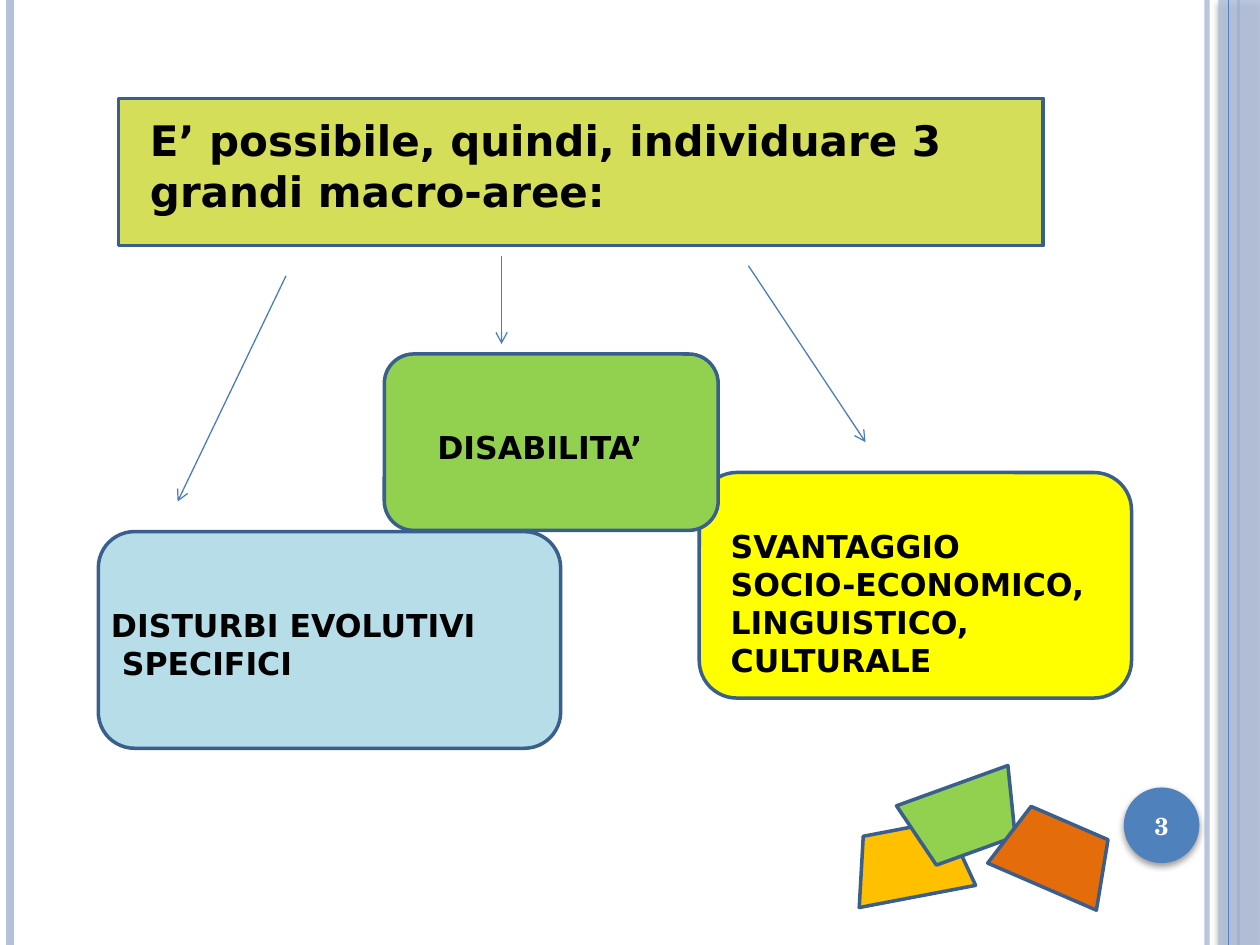
from lxml import etree
from pptx import Presentation
from pptx.dml.color import RGBColor
from pptx.enum.shapes import MSO_CONNECTOR, MSO_SHAPE
from pptx.enum.text import MSO_ANCHOR, MSO_AUTO_SIZE, PP_ALIGN
from pptx.oxml.ns import qn
from pptx.util import Pt

RECT, ROUNDED = MSO_SHAPE.RECTANGLE, MSO_SHAPE.ROUNDED_RECTANGLE
OVAL, TRAPEZOID = MSO_SHAPE.OVAL, MSO_SHAPE.TRAPEZOID
STRAIGHT = MSO_CONNECTOR.STRAIGHT
TOP, MIDDLE = MSO_ANCHOR.TOP, MSO_ANCHOR.MIDDLE
JUSTIFY, CENTER = PP_ALIGN.JUSTIFY, PP_ALIGN.CENTER
FIXED_SIZE = MSO_AUTO_SIZE.NONE

WIDTH, HEIGHT = 720, 540
BLUE, PALE_BLUE, OUTLINE, ARROW = "4F81BD", "B3C1DB", "3A5F8C", "4A7EBB"
GREEN = "92D050"


def rgb(hex_color):
    return RGBColor.from_string(hex_color)


def child(parent, tag, **attributes):
    """Append a DrawingML element with the given attributes."""
    element = etree.SubElement(parent, qn(tag))
    for name, value in attributes.items():
        element.set(name, str(value))
    return element


def set_alpha(color_format, percent):
    """Make a solid fill partly transparent."""
    color = color_format.find(".//" + qn("a:srgbClr"))
    child(color, "a:alpha", val=percent * 1000)


class SlideBuilder:
    body_font = "DejaVu Sans"
    number_font = "TeX Gyre Schola"

    def __init__(self, slide):
        self.slide = slide
        self.shapes = slide.shapes

    def line(self, start, end, color, width, alpha=100, arrow=False):
        connector = self.shapes.add_connector(
            STRAIGHT, *(Pt(value) for value in (*start, *end)))
        connector.line.color.rgb = rgb(color)
        connector.line.width = Pt(width)
        properties = connector._element.spPr
        if alpha < 100:
            set_alpha(properties, alpha)
        if arrow:
            child(properties.find(qn("a:ln")), "a:tailEnd", type="arrow")
        child(properties, "a:effectLst")

    def shape(self, kind, box, fill, outline=OUTLINE, alpha=100,
              rotation=0, shadow=False):
        shape = self.shapes.add_shape(kind, *(Pt(value) for value in box))
        shape.rotation = rotation
        shape.fill.solid()
        shape.fill.fore_color.rgb = rgb(fill)
        if alpha < 100:
            set_alpha(shape._element.spPr, alpha)
        if outline:
            shape.line.color.rgb = rgb(outline)
            shape.line.width = Pt(2)
        else:
            shape.line.fill.background()
        shape.shadow.inherit = False
        if shadow:
            effects = shape._element.spPr.find(qn("a:effectLst"))
            outer = child(effects, "a:outerShdw", blurRad=Pt(4), dist=Pt(2),
                          dir=90 * 60000, rotWithShape=0)
            child(child(outer, "a:srgbClr", val="000000"),
                  "a:alpha", val=40000)
        return shape

    def text(self, shape, lines, size=18, color="000000", font=body_font,
             align=JUSTIFY, anchor=TOP, left=7.2, top=3.6, side=0):
        frame = shape.text_frame
        frame.word_wrap = True
        frame.auto_size = FIXED_SIZE
        frame.vertical_anchor = anchor
        frame.margin_left, frame.margin_top = Pt(left), Pt(top)
        frame.margin_right, frame.margin_bottom = Pt(side), Pt(0)
        for index, line in enumerate(lines):
            paragraph = frame.add_paragraph() if index else frame.paragraphs[0]
            paragraph.alignment = align
            run = paragraph.add_run()
            run.text = line
            run.font.name = font
            run.font.size = Pt(size)
            run.font.bold = True
            run.font.color.rgb = rgb(color)

    def title(self, box, lines, behind):
        """Fill the title placeholder and bring it in front of its banner."""
        title = self.shapes.title
        title.left, title.top, title.width, title.height = map(Pt, box)
        self.text(title, lines, size=24)
        behind._element.addnext(title._element)

    def side_decoration(self):
        for x, color, width, alpha in (
                (689.8, PALE_BLUE, 3, 93),
                (5.8, PALE_BLUE, 4.5, 100),
                (707.8, BLUE, 1.5, 100)):
            self.line((x, 0), (x, HEIGHT), color, width, alpha)
        self.shape(RECT, (696.2, 0, WIDTH - 696.2, HEIGHT), PALE_BLUE,
                   outline=None, alpha=87, shadow=True)
        self.line((702, 0), (702, HEIGHT), BLUE, 0.75)

    def slide_number(self, number):
        badge = self.shape(OVAL, (642.2, 450, 43.2, 43.2), BLUE,
                           outline=None, shadow=True)
        self.text(badge, [number], size=14, color="FFFFFF",
                  font=self.number_font, align=CENTER, anchor=MIDDLE,
                  left=0, top=0)


def main():
    presentation = Presentation()
    presentation.slide_width, presentation.slide_height = Pt(WIDTH), Pt(HEIGHT)
    layout = presentation.slide_layouts[5]
    builder = SlideBuilder(presentation.slides.add_slide(layout))

    builder.side_decoration()
    builder.slide_number("3")

    # Area: box, fill, left and top text margin, lines
    areas = (
        ((399.6, 270, 247, 128.9), "FFFF00", 11.7, 25,
         ["SVANTAGGIO ", "SOCIO-ECONOMICO, LINGUISTICO, CULTURALE"]),
        ((56.2, 303.8, 264.2, 123.8), "B7DEE8", 1.2, 36.3,
         ["DISTURBI EVOLUTIVI ", " SPECIFICI "]),
        ((219.6, 202.3, 190.8, 100.8), GREEN, 25.4, 37.5,
         ["DISABILITA’"]),
    )
    for box, fill, left, top, lines in areas:
        area = builder.shape(ROUNDED, box, fill)
        builder.text(area, lines, left=left, top=top)

    banner = builder.shape(RECT, (67.7, 56.2, 528.5, 84.2), "D4DE58")
    builder.title((78.5, 61.9, 568.1, 64.8),
                  ["E’ possibile, quindi, individuare 3 ",
                   "grandi macro-aree:"], behind=banner)

    for start, end in (((163.4, 157.7), (101.5, 286.6)),
                       ((286.6, 146.2), (286.6, 196.6)),
                       ((427.7, 151.9), (494.6, 252.7))):
        builder.line(start, end, ARROW, 0.75, arrow=True)

    for left, top, rotation, fill in ((486.7, 473, 349.2, "FFC000"),
                                      (517, 447.8, 160.1, GREEN),
                                      (569.5, 468.7, 23.4, "E46C0A")):
        builder.shape(TRAPEZOID, (left, top, 67.7, 39.6), fill,
                      rotation=rotation)

    presentation.save("out.pptx")


if __name__ == "__main__":
    main()
